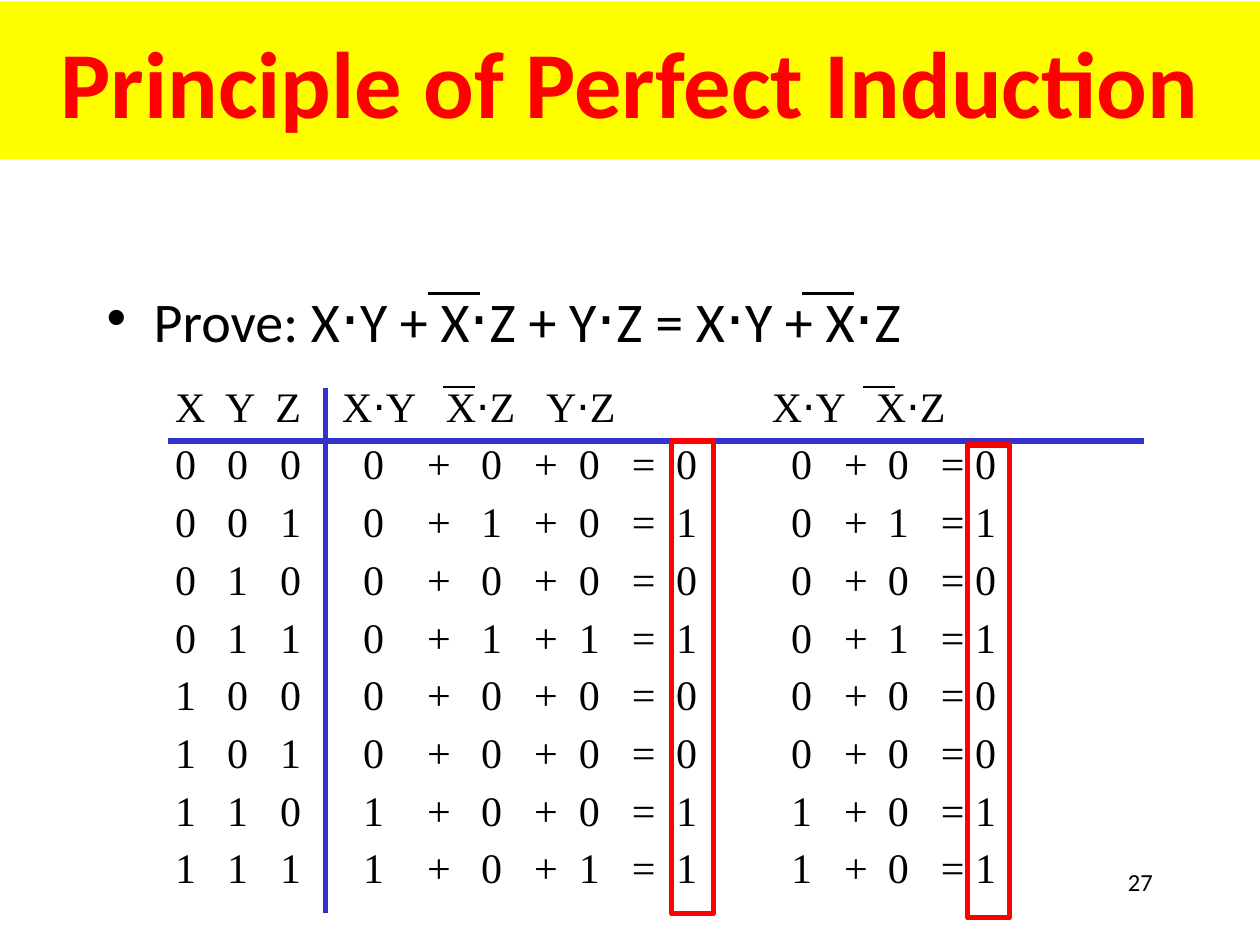
from itertools import groupby, product

from lxml.etree import SubElement
from pptx import Presentation
from pptx.dml.color import RGBColor
from pptx.enum.shapes import MSO_CONNECTOR as Connector, MSO_SHAPE as Shape
from pptx.enum.text import MSO_ANCHOR as Anchor, MSO_AUTO_SIZE as AutoSize, PP_ALIGN as Align
from pptx.oxml.ns import qn
from pptx.util import Cm, Pt

BLACK, RED, YELLOW, BLUE = "000000", "FF0000", "FFFF00", "3333CC"
DOT = "⋅"
HEADER_STOPS = (1.01, 2.02, 3.37, 5.46, 7.48, 12.03, 14.13)
ROW_STOPS = (1.05, 2.12, 3.79, 5.08, 6.17, 7.24, 8.14, 9.21, 10.1,
             12.42, 13.49, 14.37, 15.44, 16.13)


def color(value):
    """Turn a hex string into a colour."""
    return RGBColor.from_string(value)


def format_run(run, font, size, value=BLACK, bold=False):
    """Set the font of one run."""
    run.font.name = font
    run.font.size = Pt(size)
    run.font.bold = bold
    run.font.color.rgb = color(value)


def add_formula(paragraph, text, font, size, dot_size):
    """Write a formula whose product dots are set in Arial."""
    for is_dot, letters in groupby(text, lambda letter: letter == DOT):
        run = paragraph.add_run()
        run.text = "".join(letters)
        format_run(run, "Arial" if is_dot else font, dot_size if is_dot else size)


def add_text_frame(slide, left, top, width, height):
    """Add a wrapping text box and return its text frame."""
    shape = slide.shapes.add_textbox(Cm(left), Cm(top), Cm(width), Cm(height))
    shape.text_frame.word_wrap = True
    return shape.text_frame


def add_line(slide, left, top, width, height, value, weight):
    """Draw a straight line across the given extent."""
    line = slide.shapes.add_connector(
        Connector.STRAIGHT, Cm(left), Cm(top), Cm(left + width), Cm(top + height))
    line.line.color.rgb = color(value)
    line.line.width = Pt(weight)
    SubElement(line._element.spPr, qn("a:effectLst"))


def add_frame(slide, left, top, width, height):
    """Outline a result column in red."""
    shape = slide.shapes.add_shape(
        Shape.RECTANGLE, Cm(left), Cm(top), Cm(width), Cm(height))
    shape.shadow.inherit = False
    shape.fill.background()
    shape.line.color.rgb = color(RED)
    shape.line.width = Pt(3)


def set_tab_stops(paragraph, stops):
    """Give a paragraph left tab stops in centimetres."""
    tab_list = SubElement(paragraph._p.get_or_add_pPr(), qn("a:tabLst"))
    for stop in stops:
        SubElement(tab_list, qn("a:tab"), pos=str(Cm(stop)), algn="l")


def build_title(slide, left, top, width, height):
    """Place the title band."""
    title = slide.shapes.title
    title.left, title.top, title.width, title.height = map(Cm, (left, top, width, height))
    title.fill.solid()
    title.fill.fore_color.rgb = color(YELLOW)
    frame = title.text_frame
    frame.text = "Principle of Perfect Induction"
    frame.auto_size = AutoSize.NONE
    frame.vertical_anchor = Anchor.MIDDLE
    frame.paragraphs[0].alignment = Align.CENTER
    format_run(frame.paragraphs[0].runs[0], "Calibri", 54, RED, True)


def build_statement(slide, left, top, width, height):
    """Place the bulleted theorem and its complement bars."""
    paragraph = add_text_frame(slide, left, top, width, height).paragraphs[0]
    paragraph.space_before = Pt(6.4)
    properties = paragraph._p.get_or_add_pPr()
    properties.set("marL", str(Cm(0.95)))
    properties.set("indent", str(-Cm(0.95)))
    SubElement(properties, qn("a:buFont"), typeface="Arial")
    SubElement(properties, qn("a:buChar"), char="•")
    add_formula(paragraph, "Prove: X⋅Y + X⋅Z + Y⋅Z = X⋅Y + X⋅Z", "Calibri", 32, 36)
    for offset in (6.73, 14.27):
        add_line(slide, left + offset, top + 0.41, 1.04, 0, BLACK, 1.5)


def truth_rows():
    """Yield the tabbed text of each row of the truth table."""
    for x, y, z in product((0, 1), repeat=3):
        first, second, third = x & y, (1 - x) & z, y & z
        cells = (x, y, z,
                 first, "+", second, "+", third, "=", first | second | third,
                 first, "+", second, "=", first | second)
        yield "\t".join(map(str, cells))


def build_truth_table(slide, left, top, width, height):
    """Place the truth table with its rules, bars and result frames."""
    frame = add_text_frame(slide, left, top, width, height)
    header = "\t".join(("X", "Y", "Z", "X⋅Y", "X⋅Z", "Y⋅Z", "X⋅Y", "X⋅Z"))
    for index, text in enumerate((header, *truth_rows())):
        paragraph = frame.add_paragraph() if index else frame.paragraphs[0]
        paragraph.line_spacing = 0.7
        paragraph.space_before = Pt(12.8)
        set_tab_stops(paragraph, ROW_STOPS if index else HEADER_STOPS)
        add_formula(paragraph, text, "Times New Roman", 24, 24)
    add_line(slide, left + 3.28, top, 0, 10.59, BLUE, 3)
    add_line(slide, left + 0.1, top + 1.07, 19.69, 0, BLUE, 3)
    for offset in (5.66, 14.12):
        add_line(slide, left + offset, top - 0.02, 0.64, 0, BLACK, 1)
    for offset, drop in ((10.26, 1.07), (16.23, 1.15)):
        add_frame(slide, left + offset, top + drop, 0.84, 9.53)


def build_page_number(slide, left, top, width, height):
    """Place the page number."""
    paragraph = add_text_frame(slide, left, top, width, height).paragraphs[0]
    paragraph.text = "27"
    paragraph.alignment = Align.RIGHT
    format_run(paragraph.runs[0], "Calibri", 14)


def main():
    """Build and save the slide."""
    presentation = Presentation()
    presentation.slide_width, presentation.slide_height = Cm(25.4), Cm(19.05)
    slide = presentation.slides.add_slide(presentation.slide_layouts[5])
    build_title(slide, 0, 0.03, 25.4, 3.18)
    build_statement(slide, 1.9, 5.51, 22.86, 1.9)
    build_truth_table(slide, 3.28, 7.82, 20.96, 10.69)
    build_page_number(slide, 18.21, 17.35, 5.28, 1.27)
    presentation.save("out.pptx")


if __name__ == "__main__":
    main()
